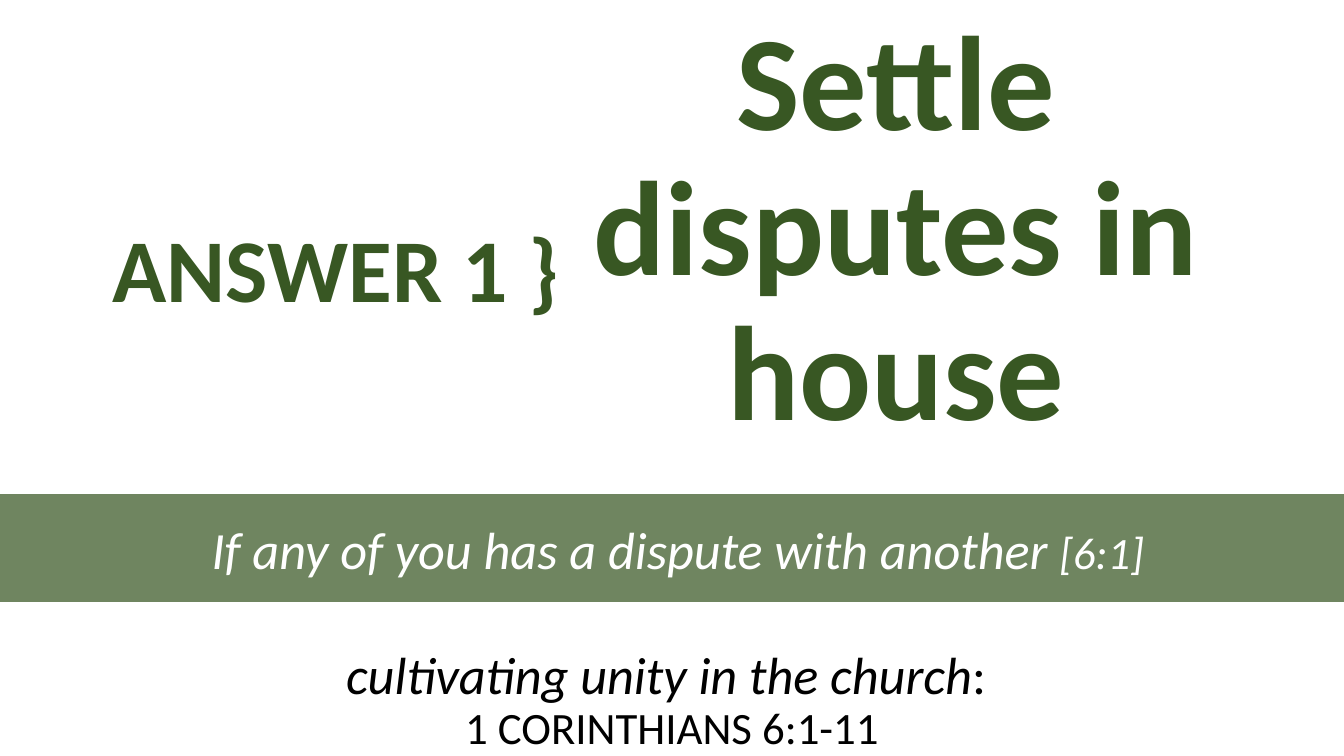
from dataclasses import dataclass

import lxml.etree
import pptx
import pptx.dml.color
import pptx.enum.shapes
import pptx.enum.text
import pptx.oxml.ns
import pptx.util

EMU_PER_PX = 9525  # 96 px to the inch
SLIDE_WIDTH, SLIDE_HEIGHT = 960, 540
SIDE_INSET, EDGE_INSET = 10, 5
COLORS = {"white": "FFFFFF", "black": "000000", "green": "385723"}
BOTTOM = pptx.enum.text.MSO_ANCHOR.BOTTOM
MIDDLE = pptx.enum.text.MSO_ANCHOR.MIDDLE


@dataclass(frozen=True)
class Span:
    text: str
    size: int
    color: str
    bold: bool = False
    italic: bool = False


@dataclass(frozen=True)
class Area:
    left: int
    top: int
    width: int
    height: int


@dataclass(frozen=True)
class TextBlock:
    area: Area
    lines: tuple[tuple[Span, ...], ...]
    bottom_inset: int = EDGE_INSET


@dataclass(frozen=True)
class Panel:
    area: Area
    color: str
    opacity: int
    line: tuple[Span, ...] = ()


WHITE_PANEL = Panel(Area(0, 0, SLIDE_WIDTH, 456), "white", 53)
VERSE_BAND = Panel(Area(0, 353, SLIDE_WIDTH, 77), "green", 72, (
    Span(" If any of you has a dispute with another ", 28, "white", italic=True),
    Span("[6:1]", 24, "white", italic=True),
))
SERIES_TITLE = TextBlock(Area(0, 527, SLIDE_WIDTH, 68), (
    (Span("cultivating unity in the church", 28, "black", italic=True),
     Span(": ", 28, "black")),
    (Span("1 CORINTHIANS 6:1-11", 24, "black"),),
), bottom_inset=56)
ANSWER_LABEL = TextBlock(Area(0, 144, 480, 115), (
    (Span("ANSWER 1 }", 48, "green", bold=True),),
), bottom_inset=29)
ANSWER = TextBlock(Area(366, 211, 548, 115), (
    (Span("Settle disputes in house", 72, "green", bold=True),),
))


def px(length: int) -> int:
    return pptx.util.Emu(length * EMU_PER_PX)


def emu_area(area: Area) -> tuple[int, ...]:
    return tuple(map(px, (area.left, area.top, area.width, area.height)))


def rgb(name: str) -> pptx.dml.color.RGBColor:
    return pptx.dml.color.RGBColor.from_string(COLORS[name])


def write_lines(frame, lines: tuple[tuple[Span, ...], ...], anchor,
                spacing: float, bottom_inset: int = EDGE_INSET) -> None:
    frame_format = {
        "word_wrap": True,
        "vertical_anchor": anchor,
        "margin_left": px(SIDE_INSET),
        "margin_right": px(SIDE_INSET),
        "margin_top": px(EDGE_INSET),
        "margin_bottom": px(bottom_inset),
    }
    for name, value in frame_format.items():
        setattr(frame, name, value)
    para = frame.paragraphs[0]
    para.alignment = pptx.enum.text.PP_ALIGN.CENTER
    para.line_spacing = spacing
    for index, line in enumerate(lines):
        if index:
            para.add_line_break()
        for span in line:
            run = para.add_run()
            run.text = span.text
            font_format = {
                "name": "Calibri",
                "size": pptx.util.Pt(span.size),
                "bold": span.bold,
                "italic": span.italic,
            }
            for name, value in font_format.items():
                setattr(run.font, name, value)
            run.font.color.rgb = rgb(span.color)


def draw_text(page, block: TextBlock) -> None:
    box = page.shapes.add_textbox(*emu_area(block.area))
    write_lines(box.text_frame, block.lines, BOTTOM, 0.9, block.bottom_inset)


def draw_panel(page, panel: Panel) -> None:
    shape = page.shapes.add_shape(
        pptx.enum.shapes.MSO_SHAPE.RECTANGLE, *emu_area(panel.area))
    shape.shadow.inherit = False
    shape.line.fill.background()
    shape.fill.solid()
    shape.fill.fore_color.rgb = rgb(panel.color)
    qn = pptx.oxml.ns.qn
    color = next(shape.element.spPr.iter(qn("a:srgbClr")))
    lxml.etree.SubElement(color, qn("a:alpha"), val=str(panel.opacity * 1000))
    if panel.line:
        write_lines(shape.text_frame, (panel.line,), MIDDLE, 1.0)


def main() -> None:
    deck = pptx.Presentation()
    deck.slide_width, deck.slide_height = px(SLIDE_WIDTH), px(SLIDE_HEIGHT)
    page = deck.slides.add_slide(deck.slide_layouts[6])
    draw_text(page, SERIES_TITLE)
    draw_panel(page, WHITE_PANEL)
    draw_text(page, ANSWER_LABEL)
    draw_panel(page, VERSE_BAND)
    draw_text(page, ANSWER)
    deck.save("out.pptx")


if __name__ == "__main__":
    main()
